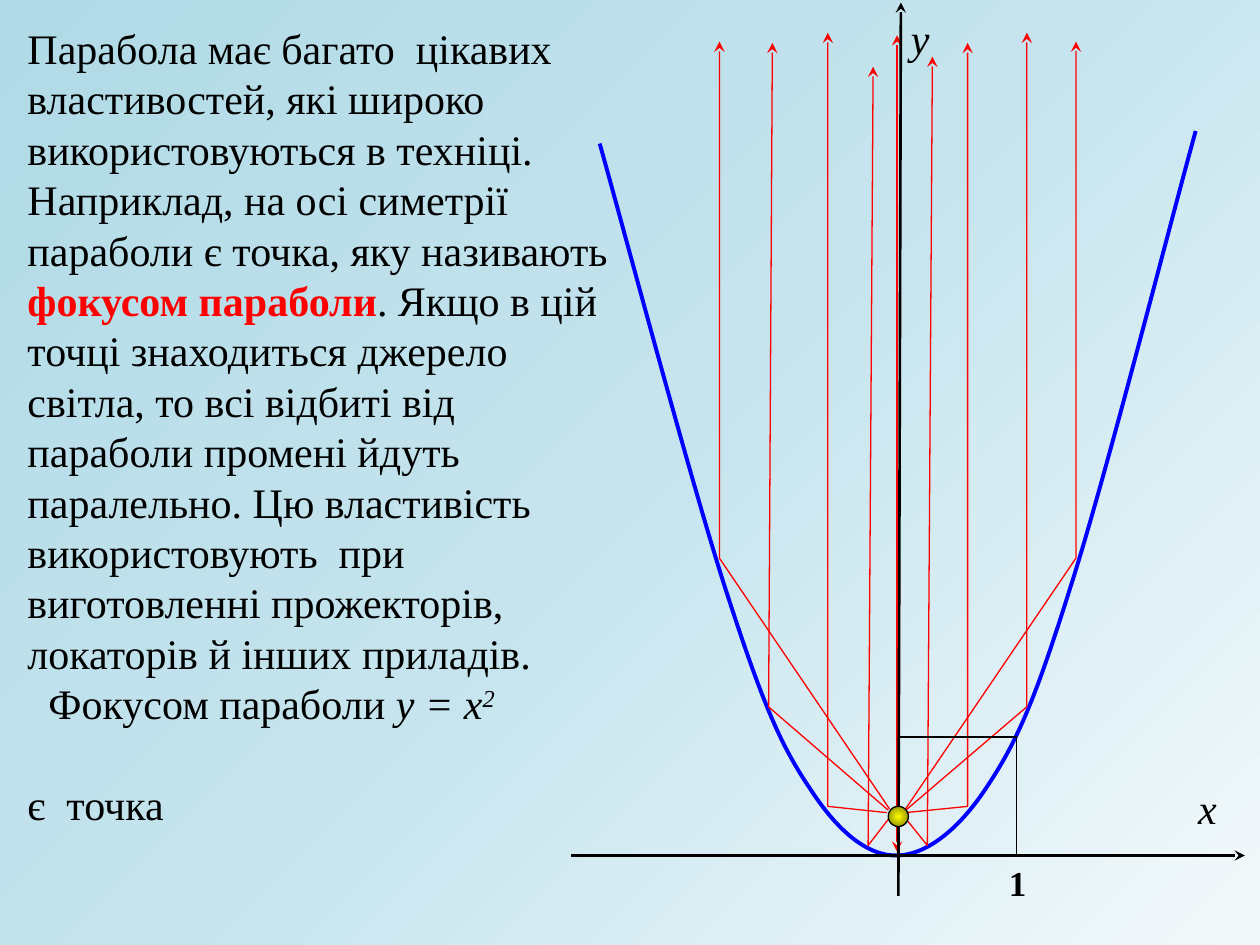
from pptx import Presentation
from pptx.dml.color import RGBColor
from pptx.enum.shapes import MSO_CONNECTOR as CONN, MSO_SHAPE as SHAPE
from pptx.enum.text import MSO_AUTO_SIZE as AUTO
from pptx.oxml.ns import qn
from pptx.util import Inches, Pt
from lxml.etree import SubElement as Sub

THEME = {
    "font": "Times New Roman", "text": 24, "tick": 20,
    "ink": "000000", "ray": "FF0000", "curve": "0000FF",
    "thin": 0.75, "axis": 1.5, "thick": 2.25,
    "bg": [(0, "B0DAE6"), (50, "C5E4ED"), (100, "F3F9FB")],
    "focus": [(0, "FFFF00"), (100, "767600")],
}

BODY = [
    [("Парабола має багато  цікавих властивостей, які широко використовуються "
      "в техніці. Наприклад, на осі симетрії параболи є точка, яку називають ", ""),
     ("фокусом параболи", "key"),
     (". Якщо в цій точці знаходиться джерело світла, то всі відбиті від "
      "параболи промені йдуть паралельно. Цю властивість використовують  при "
      "виготовленні прожекторів, локаторів й інших приладів.", "")],
    [("  Фокусом параболи ", ""), ("у = х", "italic"), ("2", "power")],
    [("є  точка", "")],
]
LABELS = [
    ("х", (9.41, 6.16, 0.35, 0.51), "text", "italic"),
    ("у", (7.13, 0.05, 0.35, 0.51), "text", "italic"),
    ("1", (7.91, 6.79, 0.34, 0.44), "tick", "bold"),
]
PARABOLA = [
    (4.76, 1.14), (4.93, 1.74), (5.5, 3.89), (5.78, 4.74), (6.06, 5.6),
    (6.2, 5.92), (6.43, 6.26), (6.65, 6.6), (6.89, 6.8), (7.13, 6.79),
    (7.36, 6.78), (7.62, 6.58), (7.85, 6.22), (8.08, 5.87), (8.22, 5.54),
    (8.49, 4.68), (8.77, 3.81), (9.28, 1.8), (9.49, 1.04),
]
RAYS = [
    [(7.16, 6.46), (8.54, 4.43), (8.54, 0.33)],
    [(7.06, 6.42), (5.71, 4.43), (5.71, 0.33)],
    [(7.19, 6.43), (8.15, 5.61), (8.15, 0.26)],
    [(7.05, 6.43), (6.1, 5.61), (6.13, 0.34)],
    [(7.18, 6.45), (7.68, 6.4), (7.68, 0.34)],
    [(7.04, 6.45), (6.57, 6.4), (6.57, 0.26)],
    [(7.19, 6.5), (7.36, 6.71), (7.4, 0.45)],
    [(7.06, 6.49), (6.89, 6.71), (6.93, 0.53)],
]
AXIAL_RAY = [(7.12, 6.76), (7.12, 0.28)]
AXES = [[(4.53, 6.79), (9.88, 6.79)], [(7.13, 7.11), (7.15, 0.02)]]
UNIT_MARK = [(8.07, 6.79), (8.07, 5.85), (7.13, 5.85)]
FOCUS = (7.05, 6.4, 0.16, 0.16)


def rgb(name):
    return RGBColor.from_string(THEME[name])


def set_gradient(fill, root, stops):
    fill.gradient()
    grad = next(root.iter(qn("a:gradFill")))
    for child in list(grad):
        grad.remove(child)
    gs_list = Sub(grad, qn("a:gsLst"))
    for pos, color in stops:
        gs = Sub(gs_list, qn("a:gs"), pos=str(pos * 1000))
        Sub(gs, qn("a:srgbClr"), val=color)
    return grad


def style_line(sp, color, width, ends=()):
    sp.line.color.rgb = rgb(color)
    sp.line.width = Pt(THEME[width])
    ln = sp.line._get_or_add_ln()
    for end in ends:
        Sub(ln, qn(f"a:{end}"), type="stealth")


def add_polyline(s, points, color, width, ends=()):
    pts = [(Inches(x), Inches(y)) for x, y in points]
    builder = s.shapes.build_freeform(*pts[0])
    builder.add_line_segments(pts[1:], close=False)
    sp = builder.convert_to_shape()
    sp.shadow.inherit = False
    sp.fill.background()
    style_line(sp, color, width, ends)
    return sp


def smooth_cubic(sp):
    lines = list(sp._element.iter(qn("a:lnTo")))
    track = lines[0].getparent()
    for i in range(0, len(lines), 3):
        cubic = Sub(track, qn("a:cubicBezTo"))
        for line in lines[i:i + 3]:
            cubic.append(line[0])
            track.remove(line)


def add_straight(s, points, color, width, ends):
    (x1, y1), (x2, y2) = points
    sp = s.shapes.add_connector(
        CONN.STRAIGHT, Inches(x1), Inches(y1), Inches(x2), Inches(y2))
    style_line(sp, color, width, ends)
    Sub(sp._element.spPr, qn("a:effectLst"))


def add_text(s, box, paragraphs, size, wrap):
    tf = s.shapes.add_textbox(*map(Inches, box)).text_frame
    tf.word_wrap = wrap
    tf.auto_size = AUTO.SHAPE_TO_FIT_TEXT
    for i, runs in enumerate(paragraphs):
        p = tf.add_paragraph() if i else tf.paragraphs[0]
        p.font.name, p.font.size = THEME["font"], Pt(THEME[size])
        for text, style in runs:
            r = p.add_run()
            r.text = text
            r.font.color.rgb = rgb("ray" if style == "key" else "ink")
            if style in ("key", "bold"):
                r.font.bold = True
            if style in ("italic", "power"):
                r.font.italic = True
            if style == "power":
                r.font._element.set("baseline", "30000")
    return tf


def main():
    """Build the slide about the focus of a parabola."""
    prs = Presentation()
    prs.slide_width, prs.slide_height = Inches(10), Inches(7.5)
    s = prs.slides.add_slide(prs.slide_layouts[6])
    grad = set_gradient(s.background.fill, s._element, THEME["bg"])
    Sub(grad, qn("a:lin"), ang="2700000", scaled="0")

    smooth_cubic(add_polyline(s, PARABOLA, "curve", "thick"))
    tf = add_text(s, (0.12, 0.13, 4.96, 6.56), BODY, "text", True)
    tf.paragraphs[-1].space_before = Pt(28.8)
    for ray in RAYS:
        add_polyline(s, ray, "ray", "thin", ["tailEnd"])
    add_straight(s, AXIAL_RAY, "ray", "thin", ["headEnd", "tailEnd"])
    for axis in AXES:
        add_straight(s, axis, "ink", "axis", ["tailEnd"])
    for text, box, size, style in LABELS:
        add_text(s, box, [[(text, style)]], size, False)
    add_polyline(s, UNIT_MARK, "ink", "thin")

    sp = s.shapes.add_shape(SHAPE.FLOWCHART_CONNECTOR, *map(Inches, FOCUS))
    sp.shadow.inherit = False
    grad = set_gradient(sp.fill, sp._element, THEME["focus"])
    radial = Sub(grad, qn("a:path"), path="circle")
    Sub(radial, qn("a:fillToRect"), l="50000", t="50000", r="50000", b="50000")
    style_line(sp, "ink", "thin")
    prs.save("out.pptx")


if __name__ == "__main__":
    main()
